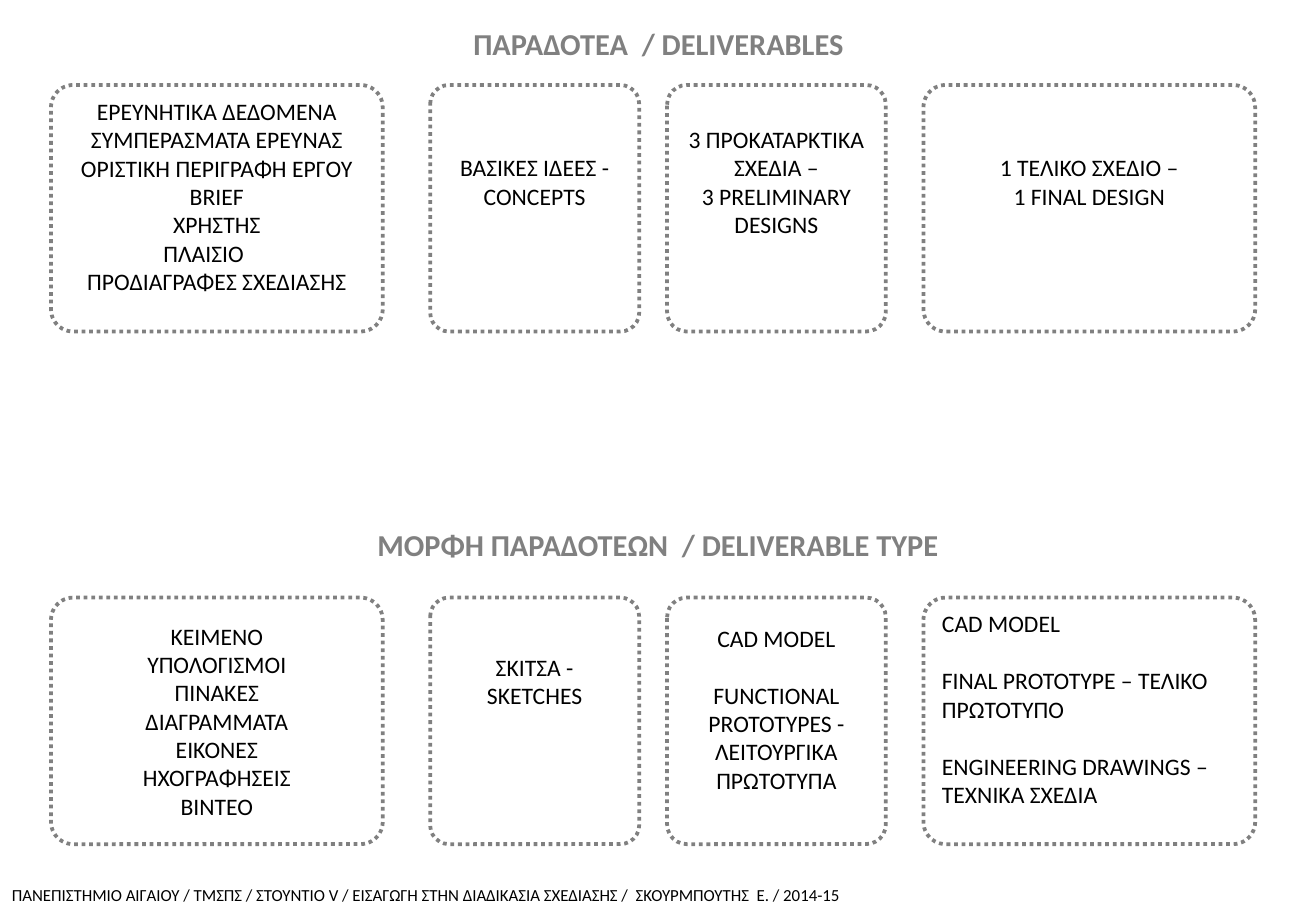
import pptx
import pptx.dml.color
import pptx.enum.dml
import pptx.enum.shapes
import pptx.enum.text
import pptx.util
from dataclasses import dataclass
from lxml import etree

Inches = pptx.util.Inches
Align = pptx.enum.text.PP_ALIGN
Anchor = pptx.enum.text.MSO_ANCHOR


@dataclass(frozen=True)
class Theme:
    font: str = "Calibri"
    ink: str = "000000"
    grey: str = "808080"
    heading_size: int = 18
    body_size: int = 14
    footer_size: int = 10
    border_width: float = 2.25
    corner: float = 0.09


def write_text(frame, lines, *, theme, size, color, bold=False, align=Align.LEFT,
               anchor=Anchor.TOP, wrap=True, gap=0, hanging=0):
    frame.word_wrap = wrap
    frame.auto_size = pptx.enum.text.MSO_AUTO_SIZE.NONE
    frame.vertical_anchor = anchor
    for index, line in enumerate(lines):
        paragraph = frame.paragraphs[0] if index == 0 else frame.add_paragraph()
        paragraph.alignment = align
        paragraph.space_before = pptx.util.Pt(gap if index else 0)
        if hanging:
            properties = paragraph._p.get_or_add_pPr()
            properties.set("marL", str(Inches(hanging)))
            properties.set("indent", str(-Inches(hanging)))
        run = paragraph.add_run()
        run.text = line
        run.font.name = theme.font
        run.font.size = pptx.util.Pt(size)
        run.font.bold = bold
        run.font.color.rgb = pptx.dml.color.RGBColor.from_string(color)


class DeliverablesSlide:
    def __init__(self, deck, theme):
        self.theme = theme
        self.slide = deck.slides.add_slide(deck.slide_layouts[5])

    def format_heading(self, heading, text, left, top, width):
        heading.left, heading.top = Inches(left), Inches(top)
        heading.width, heading.height = Inches(width), Inches(0.4)
        write_text(heading.text_frame, [text], theme=self.theme,
                   size=self.theme.heading_size, color=self.theme.grey,
                   bold=True, align=Align.CENTER, wrap=False)

    def title(self, text, left, top, width):
        self.format_heading(self.slide.shapes.title, text, left, top, width)

    def heading(self, text, left, top, width):
        heading = self.slide.shapes.add_textbox(0, 0, 0, 0)
        self.format_heading(heading, text, left, top, width)

    def footer(self, text):
        footer = self.slide.shapes.add_textbox(
            Inches(0), Inches(7.23), Inches(7.13), Inches(0.27))
        write_text(footer.text_frame, [text], theme=self.theme,
                   size=self.theme.footer_size, color=self.theme.ink, wrap=False)

    def stage(self, lines, left, top, width, lift=0, **text_format):
        stage = self.slide.shapes.add_shape(
            pptx.enum.shapes.MSO_SHAPE.ROUNDED_RECTANGLE,
            Inches(left), Inches(top), Inches(width), Inches(2.03))
        stage.adjustments[0] = self.theme.corner
        stage.shadow.inherit = False
        stage.fill.background()
        stage.line.color.rgb = pptx.dml.color.RGBColor.from_string(self.theme.grey)
        stage.line.width = pptx.util.Pt(self.theme.border_width)
        stage.line.dash_style = pptx.enum.dml.MSO_LINE.ROUND_DOT
        frame = stage.text_frame
        frame.margin_top, frame.margin_bottom = Inches(0), Inches(lift)
        write_text(frame, lines, theme=self.theme, size=self.theme.body_size,
                   color=self.theme.ink, anchor=Anchor.MIDDLE,
                   **{"align": Align.CENTER, **text_format})


COLUMNS = [(0.42, 2.73), (3.54, 1.72), (5.49, 1.8), (7.6, 2.73)]

DELIVERABLES = [
    (["ΕΡΕΥΝΗΤΙΚΑ ΔΕΔΟΜΕΝΑ", "ΣΥΜΠΕΡΑΣΜΑΤΑ ΕΡΕΥΝΑΣ", "ΟΡΙΣΤΙΚΗ ΠΕΡΙΓΡΑΦΗ ΕΡΓΟΥ",
      "BRIEF", "ΧΡΗΣΤΗΣ", "ΠΛΑΙΣΙΟ\t", "ΠΡΟΔΙΑΓΡΑΦΕΣ ΣΧΕΔΙΑΣΗΣ"],
     {"lift": 0.2, "hanging": 0.38}),
    (["ΒΑΣΙΚΕΣ ΙΔΕΕΣ - CONCEPTS"], {"lift": 0.44}),
    (["3 ΠΡΟΚΑΤΑΡΚΤΙΚΑ ΣΧΕΔΙΑ –", "3 PRELIMINARY DESIGNS"], {"lift": 0.44}),
    (["1 ΤΕΛΙΚΟ ΣΧΕΔΙΟ –", "1 FINAL DESIGN"], {"lift": 0.44}),
]

DELIVERABLE_TYPES = [
    (["ΚΕΙΜΕΝΟ", "ΥΠΟΛΟΓΙΣΜΟΙ", "ΠΙΝΑΚΕΣ", "ΔΙΑΓΡΑΜΜΑΤΑ", "ΕΙΚΟΝΕΣ",
      "ΗΧΟΓΡΑΦΗΣΕΙΣ", "ΒΙΝΤΕΟ"], {"hanging": 0.38}),
    (["ΣΚΙΤΣΑ -", "SKETCHES"], {"lift": 0.66}),
    (["CAD MODEL", "FUNCTIONAL PROTOTYPES - ΛΕΙΤΟΥΡΓΙΚΑ ΠΡΩΤΟΤΥΠΑ"],
     {"lift": 0.2, "gap": 17}),
    (["CAD MODEL", "FINAL PROTOTYPE – ΤΕΛΙΚΟ ΠΡΩΤΟΤΥΠΟ",
      "ENGINEERING DRAWINGS – ΤΕΧΝΙΚΑ ΣΧΕΔΙΑ"],
     {"lift": 0.2, "gap": 17, "align": Align.LEFT}),
]


def main():
    deck = pptx.Presentation()
    deck.slide_width, deck.slide_height = Inches(10.83), Inches(7.5)
    page = DeliverablesSlide(deck, Theme())
    page.footer("ΠΑΝΕΠΙΣΤΗΜΙΟ ΑΙΓΑΙΟΥ / ΤΜΣΠΣ / ΣΤΟΥΝΤΙΟ V / ΕΙΣΑΓΩΓΗ ΣΤΗΝ "
                "ΔΙΑΔΙΚΑΣΙΑ ΣΧΕΔΙΑΣΗΣ /  ΣΚΟΥΡΜΠΟΥΤΗΣ  Ε. / 2014-15")
    page.title("ΠΑΡΑΔΟΤΕΑ  / DELIVERABLES", 3.78, 0.16, 3.28)
    page.heading("ΜΟΡΦΗ ΠΑΡΑΔΟΤΕΩΝ  / DELIVERABLE TYPE", 2.98, 4.28, 4.87)
    for top, stages in ((0.7, DELIVERABLES), (4.92, DELIVERABLE_TYPES)):
        for (left, width), (lines, text_format) in zip(COLUMNS, stages):
            page.stage(lines, left, top, width, **text_format)
    deck.save("out.pptx")


if __name__ == "__main__":
    main()
